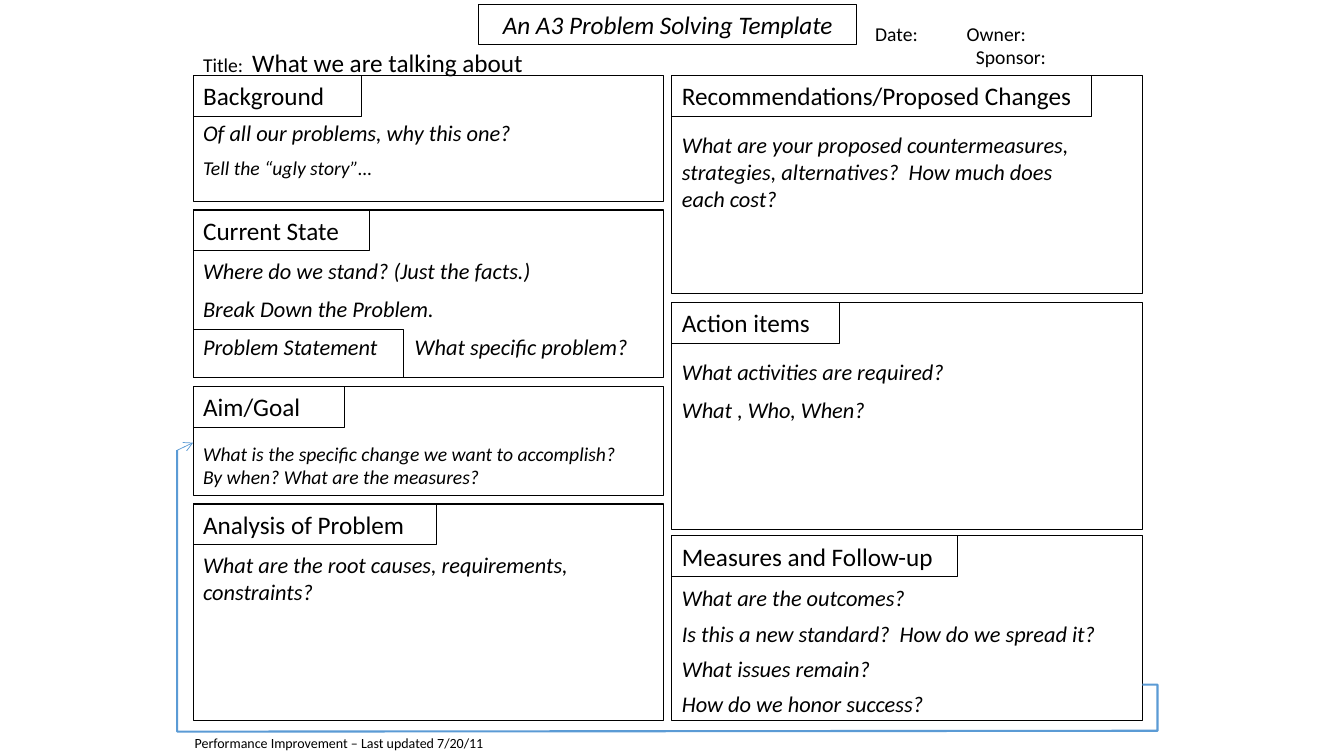
from dataclasses import dataclass

from lxml import etree
from pptx import Presentation
from pptx import util as u
from pptx.dml.color import RGBColor
from pptx.enum import shapes, text
from pptx.oxml.ns import qn

BLACK = RGBColor(0x00, 0x00, 0x00)
BLUE = RGBColor(0x5B, 0x9B, 0xD5)
FONT = "Calibri"
COLUMNS, ROWS = 160, 90
CELL = u.Inches(7.5) / ROWS
LEFT, RIGHT = 23, 80
PANEL_WIDTH = 56
HEADING_HEIGHT = 4.85


@dataclass(frozen=True)
class Line:
    words: str
    size: float = 16
    italic: bool = True
    before: float | None = None
    tab: float | None = None
    centred: bool = False


@dataclass(frozen=True)
class Panel:
    heading: str
    col: float
    row: float
    height: float
    heading_width: float
    body_row: float
    body_width: float
    body_height: float
    lines: tuple[Line, ...]


PANELS = (
    Panel("Background", LEFT, 9, 15, 20, 13.6, 54, 8.6, (
        Line("Of all our problems, why this one?"),
        Line("Tell the “ugly story”…", 14))),
    Panel("Current State", LEFT, 25, 20, 21, 30, 55, 14.2, (
        Line("Where do we stand? (Just the facts.)"),
        Line("Break Down the Problem."),
        Line("Problem Statement\tWhat specific problem?", tab=25.2))),
    Panel("Aim/Goal", LEFT, 46, 13, 18, 52, 52, 6.8, (
        Line("What is the specific change we want to accomplish? "
             "By when? What are the measures?", 14),)),
    Panel("Analysis of Problem", LEFT, 60, 25.8, 29, 65, 55, 7.8, (
        Line("What are the root causes, requirements, constraints?"),)),
    Panel("Recommendations/Proposed Changes", RIGHT, 9, 26, 50, 15, 51, 10.9, (
        Line("What are your proposed countermeasures, strategies, "
             "alternatives?  How much does each cost?"),)),
    Panel("Action items", RIGHT, 36, 27, 20, 42, 52, 9.2, (
        Line("What activities are required?"),
        Line("What , Who, When?"))),
    Panel("Measures and Follow-up", RIGHT, 63.8, 22, 34, 69, 52, 17.2, (
        Line("What are the outcomes?", before=6),
        Line("Is this a new standard?  How do we spread it?", before=6),
        Line("What issues remain?", before=6),
        Line("How do we honor success?", before=6))),
)

LOOP = ((136, 81.5), (137.8, 81.5), (137.8, 87), (21.1, 87.1), (21.1, 53.6))
ARROW_TIP = (23, 52.7)


def cells(*counts: float) -> list[u.Emu]:
    return [u.Emu(round(n * CELL)) for n in counts]


def write(tf, lines: tuple[Line, ...]) -> None:
    tf.word_wrap = True
    tf.vertical_anchor = text.MSO_ANCHOR.TOP
    for i, line in enumerate(lines):
        p = tf.add_paragraph() if i else tf.paragraphs[0]
        p.text = line.words
        p.alignment = text.PP_ALIGN.CENTER if line.centred else text.PP_ALIGN.LEFT
        p.space_before = u.Pt(line.size / 2 if line.before is None else line.before)
        p.font.name = FONT
        p.font.size = u.Pt(line.size)
        p.font.italic = line.italic
        p.font.color.rgb = BLACK
        if line.tab is not None:
            stops = etree.Element(qn("a:tabLst"))
            etree.SubElement(stops, qn("a:tab"), pos=str(cells(line.tab)[0]), algn="l")
            p._p.get_or_add_pPr().insert_element_before(stops, "a:defRPr", "a:extLst")


def add_box(s, col: float, row: float, width: float, height: float,
            lines: tuple[Line, ...] = ()) -> None:
    sp = s.shapes.add_shape(shapes.MSO_SHAPE.RECTANGLE, *cells(col, row, width, height))
    sp.shadow.inherit = False
    sp.fill.background()
    sp.line.color.rgb = BLACK
    sp.line.width = u.Pt(0.75)
    if lines:
        write(sp.text_frame, lines)


def add_label(s, col: float, row: float, width: float, height: float,
              lines: tuple[Line, ...]) -> None:
    write(s.shapes.add_textbox(*cells(col, row, width, height)).text_frame, lines)


def add_panel(s, panel: Panel) -> None:
    add_box(s, panel.col, panel.row, PANEL_WIDTH, panel.height)
    add_box(s, panel.col, panel.row, panel.heading_width, HEADING_HEIGHT,
            (Line(panel.heading, 18, italic=False),))
    add_label(s, panel.col, panel.body_row, panel.body_width, panel.body_height,
              panel.lines)


def add_feedback_loop(s) -> None:
    start, *rest = [cells(*point) for point in LOOP]
    builder = s.shapes.build_freeform(*start)
    builder.add_line_segments(rest, close=False)
    sp = builder.convert_to_shape()
    sp.shadow.inherit = False
    sp.fill.background()
    sp.line.color.rgb = BLUE
    sp.line.width = u.Pt(1.5)

    arrow = s.shapes.add_connector(shapes.MSO_CONNECTOR.STRAIGHT,
                                   *cells(*LOOP[-1], *ARROW_TIP))
    arrow.line.color.rgb = BLUE
    arrow.line.width = u.Pt(0.5)
    etree.SubElement(arrow.line._get_or_add_ln(), qn("a:tailEnd"), type="arrow")
    etree.SubElement(arrow._element.spPr, qn("a:effectLst"))


def main() -> None:
    prs = Presentation()
    prs.slide_width, prs.slide_height = cells(COLUMNS, ROWS)
    s = prs.slides.add_slide(prs.slide_layouts[6])

    add_label(s, LEFT, 5, 77, 4.85,
              (Line("Title:  What we are talking about", 18, italic=False),))
    title = s.shapes[0].text_frame.paragraphs[0]
    title.runs[0].text = "Title:  "
    title.runs[0].font.size = u.Pt(14)
    title.add_run().text = "What we are talking about"

    for panel in PANELS:
        add_panel(s, panel)
    add_box(s, LEFT, 39.2, 25, 5.8)

    add_label(s, 103, 2, 34.5, 6.8, (
        Line("Date:\tOwner:", 14, italic=False, before=0, tab=10.9),
        Line("\tSponsor:", 14, italic=False, before=0, tab=12)))
    add_box(s, 57, 0.5, 45, HEADING_HEIGHT,
            (Line("An A3 Problem Solving Template", 18, before=0, centred=True),))
    add_feedback_loop(s)
    add_label(s, 22, 86.8, 38, 3.2,
              (Line("Performance Improvement – Last updated 7/20/11", 10,
                    italic=False, before=0),))
    prs.save("out.pptx")


if __name__ == "__main__":
    main()
